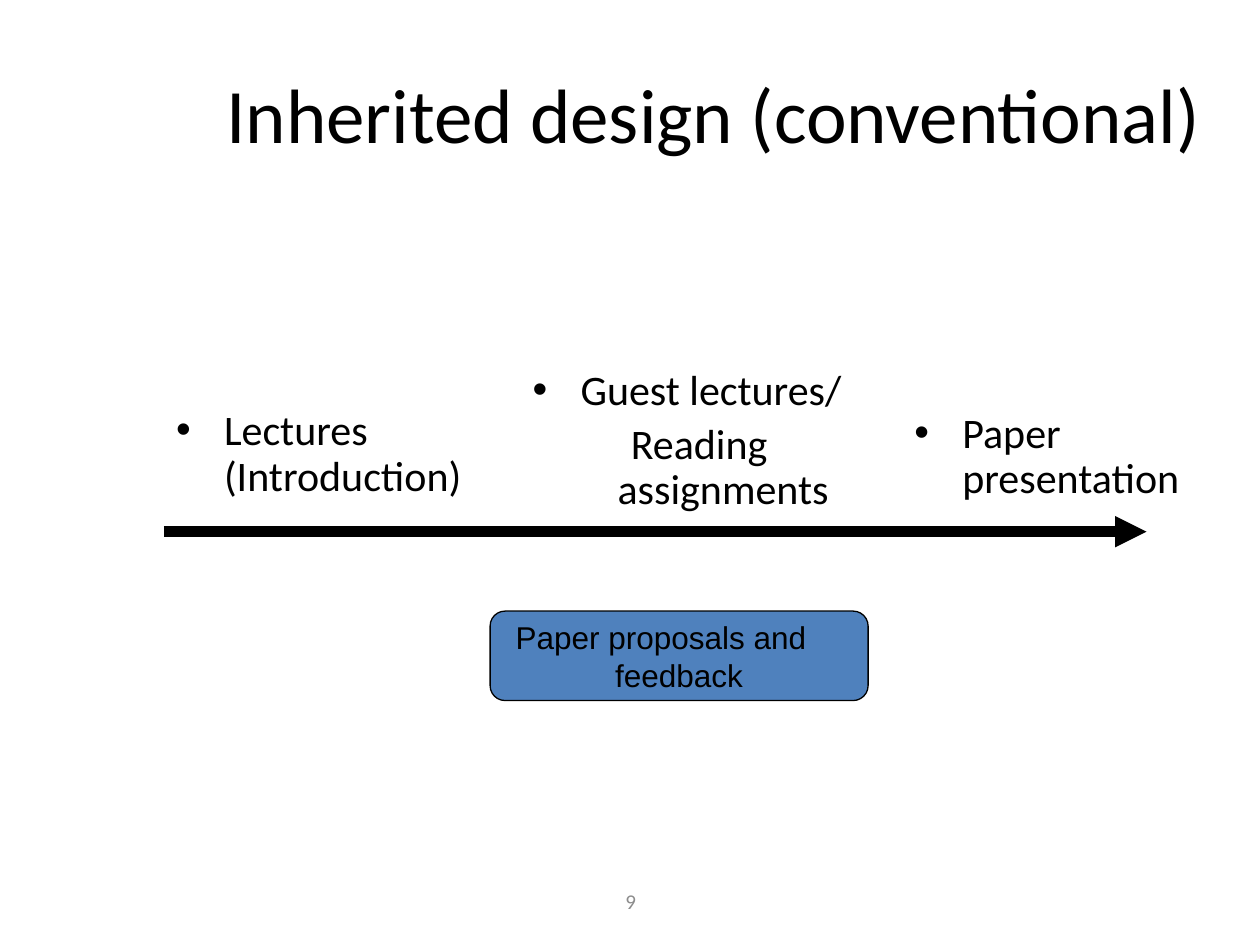
from pptx import Presentation
from pptx.dml.color import RGBColor
from pptx.enum.shapes import MSO_CONNECTOR as Link, MSO_SHAPE as Kind
from pptx.enum.text import MSO_ANCHOR as Anchor, PP_ALIGN as Align
from pptx.oxml.ns import qn
from pptx.util import Inches, Pt
from lxml.etree import SubElement

BLACK = RGBColor(0, 0, 0)
GREY = RGBColor(0x8C, 0x8C, 0x8C)
BLUE = RGBColor(0x4F, 0x81, 0xBD)
WIDE, HIGH = Inches(10), Inches(7.5)
COLS, ROWS = 100, 75


def grid(x, y, w, h):
    """Turn columns and rows into slide lengths."""
    col, row = WIDE / COLS, HIGH / ROWS
    return [int(v) for v in (x * col, y * row, w * col, h * row)]


def write(para, text, size, font="Calibri", color=BLACK, align=Align.LEFT):
    """Add the lines of a text to a paragraph as runs."""
    para.alignment = align
    for i, line in enumerate(text.split("\n")):
        if i:
            para.add_line_break()
        run = para.add_run()
        run.text = line
        run.font.size, run.font.name = Pt(size), font
        run.font.color.rgb = color


def frame(slide, box, anchor=Anchor.TOP):
    """Add a wrapping text box and return its frame."""
    body = slide.shapes.add_textbox(*grid(*box)).text_frame
    body.word_wrap = True
    body.vertical_anchor = anchor
    return body


def label(slide, box, text, size, color=BLACK):
    """Place one centred line in a box."""
    body = frame(slide, box, Anchor.MIDDLE)
    write(body.paragraphs[0], text, size, color=color, align=Align.CENTER)


def indent(para, left, first=0):
    """Set the left margin and first-line indent in inches."""
    props = para._p.get_or_add_pPr()
    props.set("marL", str(Inches(left)))
    props.set("indent", str(Inches(first)))
    return props


def stage(slide, box, text, more=None):
    """Place a bulleted stage with an optional centred second part."""
    body = frame(slide, box)
    para = body.paragraphs[0]
    props = indent(para, 0.38, -0.38)
    SubElement(props, qn("a:buFont"), typeface="Arial")
    SubElement(props, qn("a:buChar"), char="•")
    para.line_spacing = 0.9
    write(para, text, 24)
    if more:
        para = body.add_paragraph()
        SubElement(indent(para, 0.38, -0.38), qn("a:buNone"))
        para.line_spacing, para.space_before = 0.9, Pt(4.8)
        write(para, more, 24, align=Align.CENTER)


def arrow(slide, box):
    """Draw the time arrow along the top edge of a box."""
    x, y, w, h = grid(*box)
    line = slide.shapes.add_connector(Link.STRAIGHT, x, y, x + w, y + h)
    line.line.color.rgb, line.line.width = BLACK, Pt(6)
    SubElement(line.line._get_or_add_ln(), qn("a:tailEnd"), type="triangle")
    SubElement(line._element.spPr, qn("a:effectLst"))


def task(slide, box):
    """Place the rounded task box under the arrow."""
    shape = slide.shapes.add_shape(Kind.FLOWCHART_ALTERNATE_PROCESS, *grid(*box))
    shape.shadow.inherit = False
    shape.fill.solid()
    shape.fill.fore_color.rgb = BLUE
    shape.line.color.rgb, shape.line.width = BLACK, Pt(0.75)
    body = shape.text_frame
    body.word_wrap, body.vertical_anchor = True, Anchor.MIDDLE
    para = body.paragraphs[0]
    indent(para, 0.07)
    write(para, "Paper proposals and", 18, "Arial")
    write(body.add_paragraph(), "feedback", 18, "Arial", align=Align.CENTER)


def main():
    """Build and save the slide."""
    deck = Presentation()
    deck.slide_width, deck.slide_height = WIDE, HIGH
    slide = deck.slides.add_slide(deck.slide_layouts[6])
    label(slide, (34.2, 69.5, 31.7, 4), "9", 12, GREY)
    label(slide, (15.8, 2.9, 81.7, 12.1), "Inherited design (conventional)", 44)
    stage(slide, (13, 32, 28.4, 9.3), "Lectures\n(Introduction)")
    arrow(slide, (13, 42.2, 78, 0))
    stage(slide, (41.3, 28.8, 28.4, 13.4), "Guest lectures/", "Reading assignments")
    stage(slide, (71.6, 32.2, 28.4, 9.3), "Paper presentation")
    task(slide, (38.9, 48.5, 30, 7.1))
    deck.save("out.pptx")


if __name__ == "__main__":
    main()
